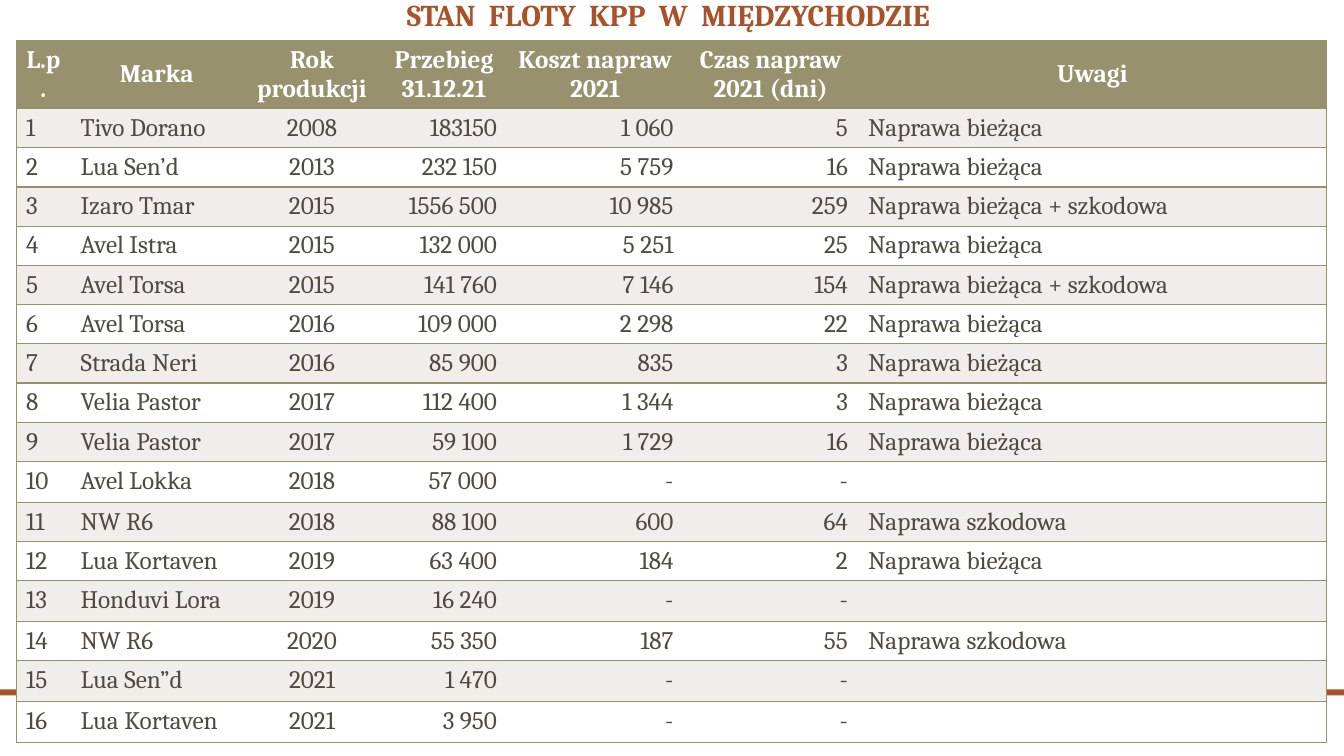
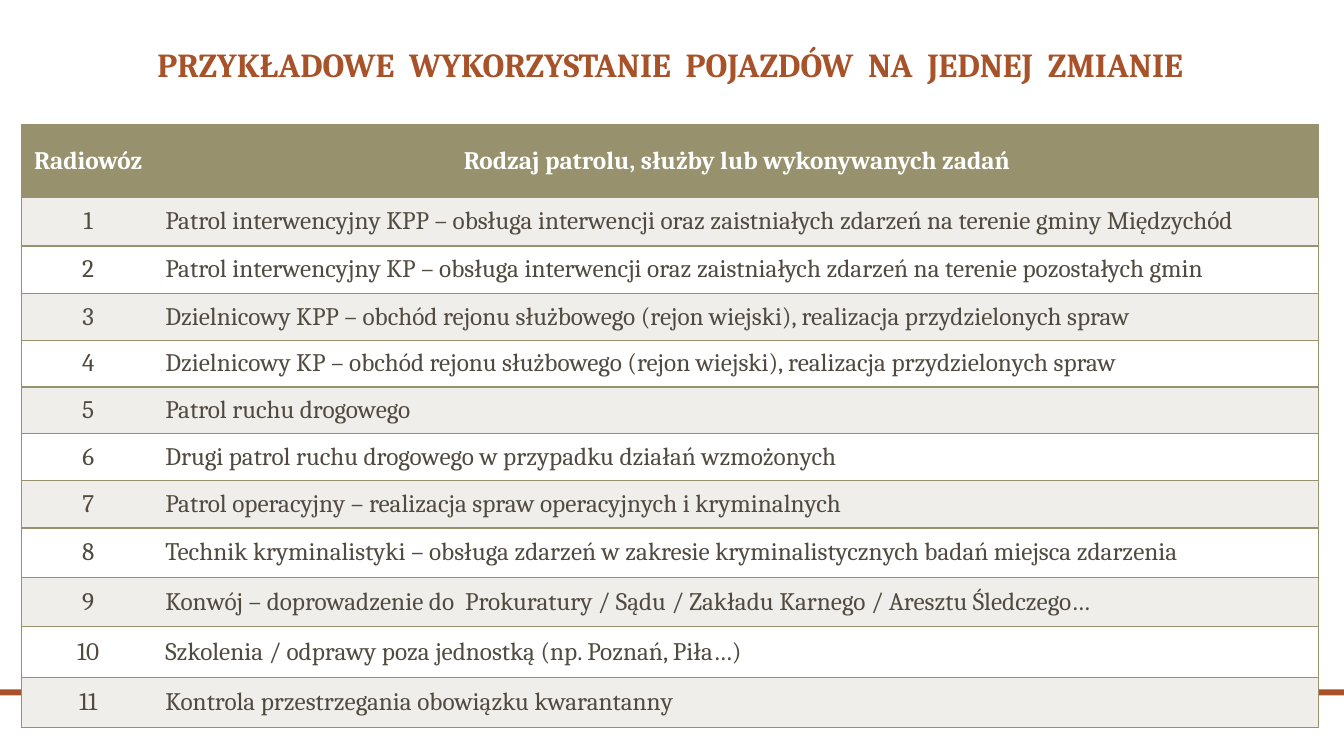
from dataclasses import dataclass

from lxml import etree
from pptx import Presentation
from pptx import util as u
from pptx.dml.color import RGBColor
from pptx.enum import shapes, text
from pptx.oxml.ns import qn
from pptx.presentation import Presentation as Deck
from pptx.slide import Slide, SlideLayout
from pptx.table import _Cell as Cell
from pptx.text.text import TextFrame

LEFT, CENTER, RIGHT = text.PP_ALIGN.LEFT, text.PP_ALIGN.CENTER, text.PP_ALIGN.RIGHT
TOP, MIDDLE, BOTTOM = (text.MSO_ANCHOR.TOP, text.MSO_ANCHOR.MIDDLE,
                       text.MSO_ANCHOR.BOTTOM)
PLAIN_TABLE_STYLE = "{2D5ABB26-0587-4C30-8999-92F81FD0307C}"


@dataclass(frozen=True)
class Theme:
    font: str = "Cambria"
    accent: str = "A85229"
    header: str = "98916E"
    body: str = "514A40"
    stripe: str = "EFEEEB"
    white: str = "FFFFFF"
    table_size: float = 18
    border: float = 1


@dataclass(frozen=True)
class Area:
    left: float
    top: float
    width: float
    height: float

    def emu(self) -> list[int]:
        return [u.Inches(length)
                for length in (self.left, self.top, self.width, self.height)]


@dataclass(frozen=True)
class Column:
    heading: str
    width: float
    align: text.PP_ALIGN = LEFT


@dataclass(frozen=True)
class TableSlide:
    title: str
    title_size: float
    title_area: Area
    left: float
    top: float
    columns: list[Column]
    row_heights: list[float]
    records: list[tuple[str, ...]]
    body_anchor: text.MSO_ANCHOR


THEME = Theme()
WIDTH, HEIGHT = 13.33, 7.5
BAND = Area(0, 6.84, WIDTH, 0.06)

CURRENT = "Naprawa bieżąca"
DAMAGE = "Naprawa szkodowa"
BOTH = "Naprawa bieżąca + szkodowa"
FLEET = [
    ("Tivo Dorano", "2008", "183150", "1 060", "5", CURRENT),
    ("Lua Sen’d", "2013", "232 150", "5 759", "16", CURRENT),
    ("Izaro Tmar", "2015", "1556 500", "10 985", "259", BOTH),
    ("Avel Istra", "2015", "132 000", "5 251", "25", CURRENT),
    ("Avel Torsa", "2015", "141 760", "7 146", "154", BOTH),
    ("Avel Torsa", "2016", "109 000", "2 298", "22", CURRENT),
    ("Strada Neri", "2016", "85 900", "835", "3", CURRENT),
    ("Velia Pastor", "2017", "112 400", "1 344", "3", CURRENT),
    ("Velia Pastor", "2017", "59 100", "1 729", "16", CURRENT),
    ("Avel Lokka", "2018", "57 000", "-", "-", ""),
    ("NW R6", "2018", "88 100", "600", "64", DAMAGE),
    ("Lua Kortaven", "2019", "63 400", "184", "2", CURRENT),
    ("Honduvi Lora", "2019", "16 240", "-", "-", ""),
    ("NW R6", "2020", "55 350", "187", "55", DAMAGE),
    ("Lua Sen”d", "2021", "1 470", "-", "-", ""),
    ("Lua Kortaven", "2021", "3 950", "-", "-", ""),
]
DUTIES = [
    "Patrol interwencyjny KPP – obsługa interwencji oraz zaistniałych zdarzeń "
    "na terenie gminy Międzychód",
    "Patrol interwencyjny KP – obsługa interwencji oraz zaistniałych zdarzeń "
    "na terenie pozostałych gmin",
    "Dzielnicowy KPP – obchód rejonu służbowego (rejon wiejski), "
    "realizacja przydzielonych spraw",
    "Dzielnicowy KP – obchód rejonu służbowego (rejon wiejski), "
    "realizacja przydzielonych spraw",
    "Patrol ruchu drogowego",
    "Drugi patrol ruchu drogowego w przypadku działań wzmożonych",
    "Patrol operacyjny – realizacja spraw operacyjnych i kryminalnych",
    "Technik kryminalistyki – obsługa zdarzeń w zakresie kryminalistycznych "
    "badań miejsca zdarzenia",
    "Konwój – doprowadzenie do  Prokuratury / Sądu / Zakładu Karnego / "
    "Aresztu Śledczego…",
    "Szkolenia / odprawy poza jednostką (np. Poznań, Piła…)",
    "Kontrola przestrzegania obowiązku kwarantanny",
]


def numbered(rows: list[tuple[str, ...]]) -> list[tuple[str, ...]]:
    return [(str(number), *row) for number, row in enumerate(rows, start=1)]


SLIDES = [
    TableSlide(
        title="STAN  FLOTY  KPP  W  MIĘDZYCHODZIE",
        title_size=21.6,
        title_area=Area(1.38, 0, 10.5, 0.38),
        left=0.16,
        top=0.4,
        columns=[
            Column("L.p.", 0.54),
            Column("Marka", 1.71),
            Column("Rok produkcji", 1.37, CENTER),
            Column("Przebieg\v31.12.21", 1.25, RIGHT),
            Column("Koszt napraw 2021", 1.75, RIGHT),
            Column("Czas napraw 2021 (dni)", 1.73, RIGHT),
            Column("Uwagi", 4.65),
        ],
        row_heights=[0.66] + [0.38] * len(FLEET),
        records=numbered(FLEET),
        body_anchor=TOP,
    ),
    TableSlide(
        title="PRZYKŁADOWE  WYKORZYSTANIE  POJAZDÓW  NA  JEDNEJ  ZMIANIE",
        title_size=24,
        title_area=Area(0.93, 0.33, 11.43, 0.56),
        left=0.21,
        top=1.24,
        columns=[
            Column("Radiowóz", 1.33, CENTER),
            Column("Rodzaj patrolu, służby lub wykonywanych zadań", 11.54),
        ],
        row_heights=[0.72, 0.48, 0.47, 0.47, 0.46, 0.46, 0.47, 0.47,
                     0.49, 0.49, 0.5, 0.5],
        records=numbered([(duty,) for duty in DUTIES]),
        body_anchor=MIDDLE,
    ),
]


def write(frame: TextFrame, content: str, *, size: float, color: str,
          bold: bool = False, align: text.PP_ALIGN = LEFT,
          spacing: float = 1) -> None:
    para = frame.paragraphs[0]
    para.text = content
    para.alignment = align
    para.line_spacing = spacing
    for span in para.runs:
        span.font.name = THEME.font
        span.font.size = u.Pt(size)
        span.font.bold = bold
        span.font.color.rgb = RGBColor.from_string(color)


def set_borders(cell: Cell, sides: str) -> None:
    """Draw the borders named by the letters L, R, T and B, in that order."""
    properties = cell._tc.get_or_add_tcPr()
    for index, side in enumerate(sides):
        line = etree.Element(qn(f"a:ln{side}"), w=str(u.Pt(THEME.border)))
        fill = etree.SubElement(line, qn("a:solidFill"))
        etree.SubElement(fill, qn("a:srgbClr"), val=THEME.header)
        properties.insert(index, line)


def add_title(slide: Slide, page: TableSlide) -> None:
    title = slide.shapes.title
    title.left, title.top, title.width, title.height = page.title_area.emu()
    frame = title.text_frame
    frame.auto_size = text.MSO_AUTO_SIZE.NONE
    frame.vertical_anchor = BOTTOM
    write(frame, page.title, size=page.title_size, color=THEME.accent,
          bold=True, align=CENTER, spacing=0.9)


def add_table(slide: Slide, page: TableSlide) -> None:
    area = Area(page.left, page.top, sum(column.width for column in page.columns),
                sum(page.row_heights))
    rows = [tuple(column.heading for column in page.columns), *page.records]
    box = slide.shapes.add_table(len(rows), len(page.columns), *area.emu())
    box.element.find(".//" + qn("a:tableStyleId")).text = PLAIN_TABLE_STYLE
    table = box.table
    for grid_column, column in zip(table.columns, page.columns):
        grid_column.width = u.Inches(column.width)
    for grid_row, height in zip(table.rows, page.row_heights):
        grid_row.height = u.Inches(height)

    last = len(page.columns) - 1
    for row_index, row in enumerate(rows):
        is_header = row_index == 0
        stripe = THEME.stripe if row_index % 2 else THEME.white
        for index, (column, content) in enumerate(zip(page.columns, row)):
            cell = table.cell(row_index, index)
            cell.fill.solid()
            cell.fill.fore_color.rgb = RGBColor.from_string(
                THEME.header if is_header else stripe)
            cell.vertical_anchor = MIDDLE if is_header else page.body_anchor
            write(cell.text_frame, content, size=THEME.table_size,
                  color=THEME.white if is_header else THEME.body,
                  bold=is_header, align=CENTER if is_header else column.align)
            set_borders(cell, "L" * (index == 0) + "R" * (index == last) + "TB")


def move_band_to_layout(slide: Slide, layout: SlideLayout) -> None:
    """Draw the band on a slide, then hand it to the layout for all slides."""
    band = slide.shapes.add_shape(shapes.MSO_SHAPE.RECTANGLE, *BAND.emu())
    band.shadow.inherit = False
    band.fill.solid()
    band.fill.fore_color.rgb = RGBColor.from_string(THEME.accent)
    band.line.fill.background()
    layout.shapes.element.append(band.element)


def build() -> Deck:
    deck = Presentation()
    deck.slide_width, deck.slide_height = u.Inches(WIDTH), u.Inches(HEIGHT)
    layout = deck.slide_layouts.get_by_name("Title Only")
    for index, page in enumerate(SLIDES):
        slide = deck.slides.add_slide(layout)
        if index == 0:
            move_band_to_layout(slide, layout)
        add_title(slide, page)
        add_table(slide, page)
    return deck


def main() -> None:
    build().save("out.pptx")


if __name__ == "__main__":
    main()
